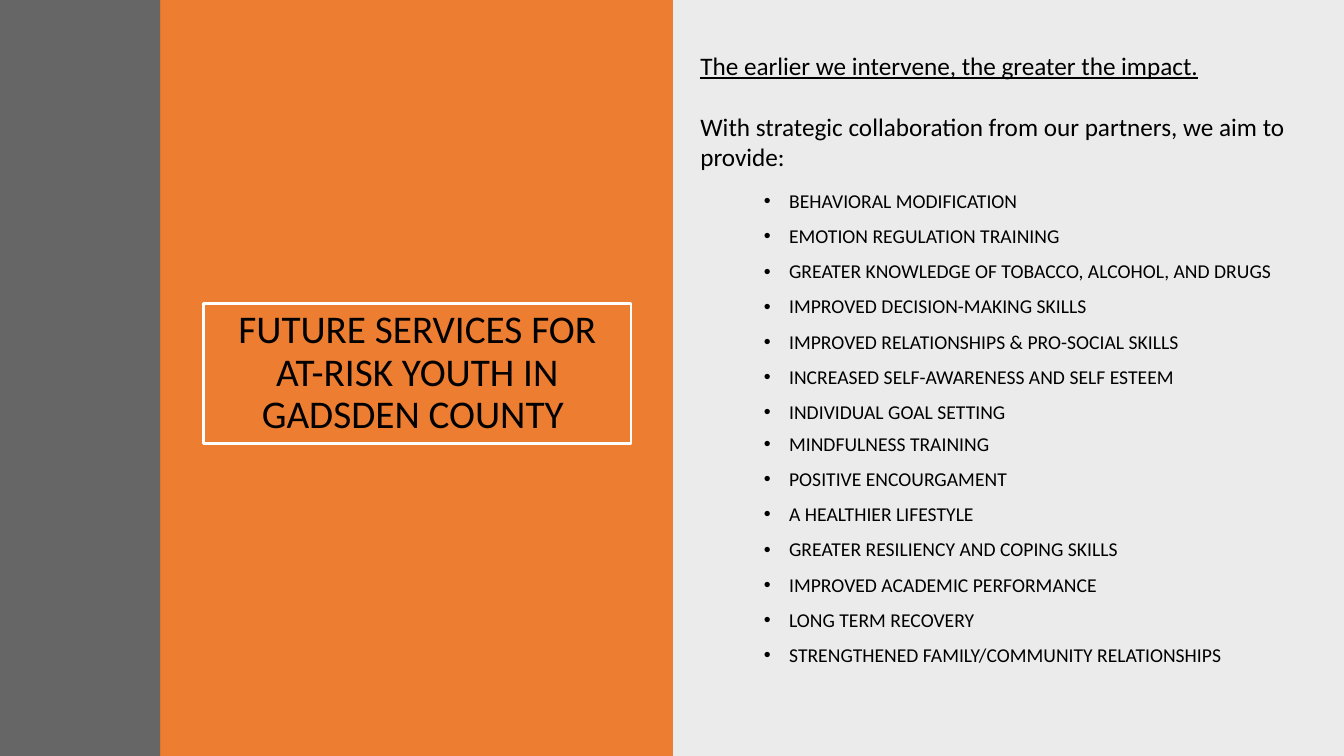
from lxml.etree import SubElement
from pptx import Presentation
from pptx.dml.color import RGBColor
from pptx.enum.shapes import MSO_SHAPE
from pptx.enum.text import MSO_ANCHOR, PP_ALIGN
from pptx.oxml.ns import qn
from pptx.util import Pt

BLACK = RGBColor(0x00, 0x00, 0x00)
WHITE = RGBColor(0xFF, 0xFF, 0xFF)
GRAY = RGBColor(0x40, 0x40, 0x40)
ORANGE = RGBColor(0xED, 0x7D, 0x31)

WIDE, HIGH = 960, 540
EDGE, MID = 114.5, 480.24  # left and right sides of the orange band

TITLE = "FUTURE SERVICES FOR AT-RISK YOUTH IN GADSDEN COUNTY "
MOTTO = "The earlier we intervene, the greater the impact."
LEAD = "With strategic collaboration from our partners, we aim to provide:"
SKILLS = [
    "BEHAVIORAL MODIFICATION",
    "EMOTION REGULATION TRAINING",
    "GREATER KNOWLEDGE OF TOBACCO, ALCOHOL, AND DRUGS",
    "IMPROVED DECISION-MAKING SKILLS",
    "IMPROVED RELATIONSHIPS & PRO-SOCIAL SKILLS",
    "INCREASED SELF-AWARENESS AND SELF ESTEEM",
    "INDIVIDUAL GOAL SETTING",
]
GAINS = [
    "MINDFULNESS TRAINING",
    "POSITIVE ENCOURGAMENT",
    "A HEALTHIER LIFESTYLE",
    "GREATER RESILIENCY AND COPING SKILLS",
    "IMPROVED ACADEMIC PERFORMANCE",
    "LONG TERM RECOVERY",
    "STRENGTHENED FAMILY/COMMUNITY RELATIONSHIPS",
]


def write(para, text, font="Calibri", size=18, color=BLACK, under=False,
          align=PP_ALIGN.LEFT, lines=None, before=0):
    """Put text in a paragraph and format it."""
    run = para.add_run()
    run.text = text
    run.font.name = font
    run.font.size = Pt(size)
    run.font.color.rgb = color
    run.font.underline = under
    para.alignment = align
    para.line_spacing = lines
    para.space_before = Pt(before)


class Deck:
    """Holds the style and the current slide."""

    font = "Calibri"

    def __init__(self):
        self.file = Presentation()
        self.file.slide_width, self.file.slide_height = Pt(WIDE), Pt(HIGH)
        self.slide = self.file.slides.add_slide(self.file.slide_layouts[6])

    def rect(self, x, y, w, h, fill=None, alpha=100, line=None):
        box = self.slide.shapes.add_shape(
            MSO_SHAPE.RECTANGLE, Pt(x), Pt(y), Pt(w), Pt(h))
        box.shadow.inherit = False
        if fill is None:
            box.fill.background()
        else:
            box.fill.solid()
            box.fill.fore_color.rgb = fill
            if alpha < 100:
                tone = box.fill._xPr.find(".//" + qn("a:srgbClr"))
                SubElement(tone, qn("a:alpha"), val=str(alpha * 1000))
        if line is None:
            box.line.fill.background()
        else:
            box.line.color.rgb = line
            box.line.width = Pt(2)
        return box

    def title(self, x, y, w, h, text):
        frame = self.rect(x, y, w, h, line=WHITE).text_frame
        frame.word_wrap = True
        frame.vertical_anchor = MSO_ANCHOR.MIDDLE
        write(frame.paragraphs[0], text, font=self.font, size=28,
              align=PP_ALIGN.CENTER, lines=0.9)

    def text(self, x, y, w, h, items, bullet=False, **style):
        """Add a text box; items are pairs of text and own format."""
        frame = self.slide.shapes.add_textbox(
            Pt(x), Pt(y), Pt(w), Pt(h)).text_frame
        frame.word_wrap = True
        for i, (text, extra) in enumerate(items):
            para = frame.add_paragraph() if i else frame.paragraphs[0]
            write(para, text, font=self.font, **{**style, **extra})
            if bullet:
                props = para._p.get_or_add_pPr()
                props.set("marL", str(Pt(18)))
                props.set("indent", str(-Pt(18)))
                SubElement(props, qn("a:buFont"), typeface="Arial")
                SubElement(props, qn("a:buChar"), char="•")

    def bullets(self, x, y, w, h, items):
        self.text(x, y, w, h, [(item, {}) for item in items], bullet=True,
                  size=14, lines=0.9, before=10)


def main():
    deck = Deck()

    # Colour bands and title
    deck.rect(MID, 0, WIDE - MID, HIGH, fill=BLACK, alpha=8)
    deck.rect(EDGE, 0, MID - EDGE + 0.5, HIGH, fill=ORANGE)
    deck.title(145.2, 216.6, 305.6, 100.2, TITLE)
    deck.rect(0, 0, EDGE, HIGH, fill=GRAY, alpha=80)

    # Two bullet lists
    for top, items in ((133.2, SKILLS), (306.7, GAINS)):
        deck.bullets(538.6, top, 398.2, 200.9, items)

    # Opening lines
    deck.text(493.2, 32.4, 443.5, 94.3,
              [(MOTTO, {"under": True}), (LEAD, {"before": 22})])

    deck.file.save("out.pptx")


if __name__ == "__main__":
    main()
